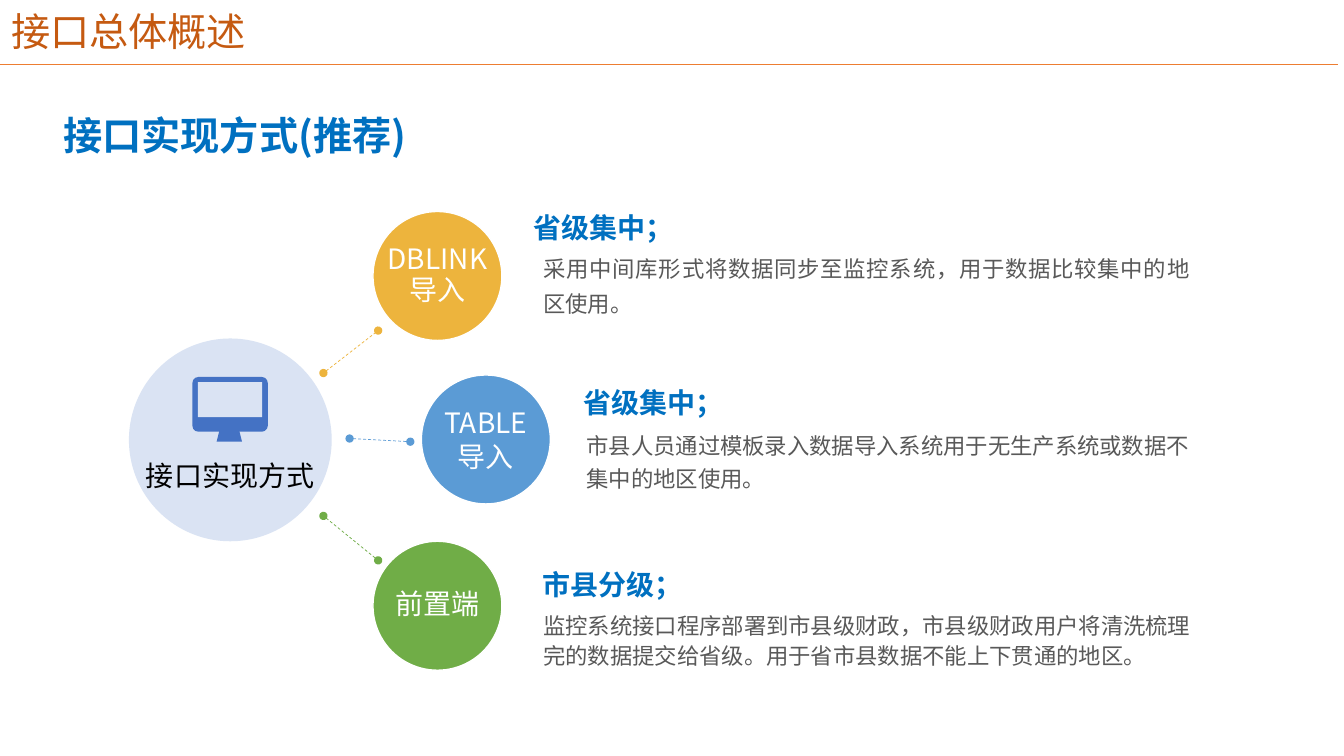
"""Build a slide on the ways to implement the data interface."""
from lxml.etree import SubElement
from pptx import Presentation
from pptx.dml.color import RGBColor
from pptx.enum.dml import MSO_LINE
from pptx.enum.shapes import MSO_CONNECTOR, MSO_SHAPE
from pptx.enum.text import MSO_ANCHOR, PP_ALIGN
from pptx.oxml.ns import qn
from pptx.util import Cm, Pt

FONT = "Noto Sans CJK SC"
ORANGE, BLUE, GREY, WHITE, PALE = "C55A11", "0070C0", "595959", "FFFFFF", "DAE3F3"
NO_MARGINS = {f"margin_{side}": 0 for side in ("left", "top", "right", "bottom")}


def write(shape, text, size, color, bold=False, frame_format={}, **paragraph_format):
    frame = shape.text_frame
    for name, value in {"word_wrap": True, **frame_format}.items():
        setattr(frame, name, value)
    paragraph = frame.paragraphs[0]
    paragraph.text = text
    for name, value in paragraph_format.items():
        setattr(paragraph, name, value)
    for run in paragraph.runs:
        for name, value in {"name": FONT, "size": Pt(size), "bold": bold}.items():
            setattr(run.font, name, value)
        run.font.color.rgb = RGBColor.from_string(color)
        SubElement(run.font._element, qn("a:ea"), typeface=FONT)


def draw(kind, box, color):
    shape = slide.shapes.add_shape(kind, *map(Cm, box))
    shape.shadow.inherit = False
    shape.fill.solid()
    shape.fill.fore_color.rgb = RGBColor.from_string(color)
    shape.line.fill.background()
    return shape


presentation = Presentation()
presentation.slide_width, presentation.slide_height = Cm(33.87), Cm(19.05)
slide = presentation.slides.add_slide(presentation.slide_layouts[5])

title = slide.shapes.title
title_place = {"left": 0.03, "top": 0.08, "width": 16.1, "height": 1.52}
for name, value in title_place.items():
    setattr(title, name, Cm(value))
write(title, "接口总体概述", 28, ORANGE, frame_format={"vertical_anchor": MSO_ANCHOR.MIDDLE},
      alignment=PP_ALIGN.LEFT, line_spacing=0.9)

heading = slide.shapes.add_textbox(Cm(1.35), Cm(2.67), Cm(9.27), Cm(1.45))
write(heading, "接口实现方式(推荐)", 28, BLUE, True, alignment=PP_ALIGN.JUSTIFY)

lines = [
    ((-0.08, 1.63, 33.73, 1.63), "ED7D31", 1, False),
    ((8.15, 9.4, 9.53, 8.33), "EDB43D", 0.5, True),
    ((8.81, 11.05, 10.34, 11.13), "5B9BD5", 0.5, True),
    ((8.15, 13, 9.53, 14.12), "70AD47", 0.5, True),
]
for ends, color, width, dotted in lines:
    connector = slide.shapes.add_connector(MSO_CONNECTOR.STRAIGHT, *map(Cm, ends))
    connector.line.color.rgb = RGBColor.from_string(color)
    connector.line.width = Pt(width)
    if dotted:
        connector.line.dash_style = MSO_LINE.DASH
        for end in ("a:headEnd", "a:tailEnd"):
            SubElement(connector.line._get_or_add_ln(), qn(end), type="oval")
    SubElement(connector._element.spPr, qn("a:effectLst"))

circles = [
    (9.4, 5.33, "EDB43D", "DBLINK\v导入", 0.9),
    (10.62, 9.45, "5B9BD5", "TABLE\v导入", 1),
    (9.4, 13.64, "70AD47", "前置端", 0.9),
]
circle_frame = {**NO_MARGINS, "word_wrap": False, "vertical_anchor": MSO_ANCHOR.MIDDLE}
for left, top, color, text, spacing in circles:
    circle = draw(MSO_SHAPE.OVAL, (left, top, 3.25, 3.25), color)
    circle.line.color.rgb = RGBColor.from_string(WHITE)
    circle.line.width = Pt(1)
    write(circle, text, 20, WHITE, frame_format=circle_frame,
          alignment=PP_ALIGN.CENTER, line_spacing=spacing)

draw(MSO_SHAPE.OVAL, (3.25, 8.53, 5.11, 5.11), PALE)
monitor = draw(MSO_SHAPE.ROUNDED_RECTANGLE, (4.85, 9.5, 1.9, 1.38), "4472C4")
monitor.adjustments[0] = 0.11
draw(MSO_SHAPE.RECTANGLE, (4.99, 9.63, 1.62, 0.88), PALE)
draw(MSO_SHAPE.TRAPEZOID, (5.46, 10.86, 0.64, 0.27), "4472C4")

label = slide.shapes.add_textbox(Cm(3.43), Cm(11.43), Cm(4.75), Cm(1.12))
write(label, "接口实现方式", 20, "000000", frame_format={"word_wrap": False})

methods = [
    (" 省级集中；", (13.28, 5.13, 13.34, 0.94), 1.2,
     "采用中间库形式将数据同步至监控系统，用于数据比较集中的地区使用。",
     (13.44, 6.1, 16.81, 2.03), 1.3, PP_ALIGN.JUSTIFY),
    ("省级集中；", (14.71, 9.3, 13.06, 1.27), 1.5,
     "市县人员通过模板录入数据导入系统用于无生产系统或数据不集中的地区使用。",
     (14.53, 10.64, 16, 1.91), 1.2, PP_ALIGN.LEFT),
    ("市县分级；", (13.67, 13.87, 14.94, 1.27), 1.5,
     "监控系统接口程序部署到市县级财政，市县级财政用户将清洗梳理完的数据提交给省级。用于省市县数据不能上下贯通的地区。",
     (13.44, 15.24, 17.09, 1.75), 1.1, PP_ALIGN.LEFT),
]
for name, name_box, name_spacing, detail, detail_box, detail_spacing, alignment in methods:
    write(slide.shapes.add_textbox(*map(Cm, name_box)), name, 20, BLUE, True, NO_MARGINS,
          alignment=PP_ALIGN.JUSTIFY, line_spacing=name_spacing)
    write(slide.shapes.add_textbox(*map(Cm, detail_box)), detail, 16, GREY,
          alignment=alignment, line_spacing=detail_spacing)

presentation.save("out.pptx")
